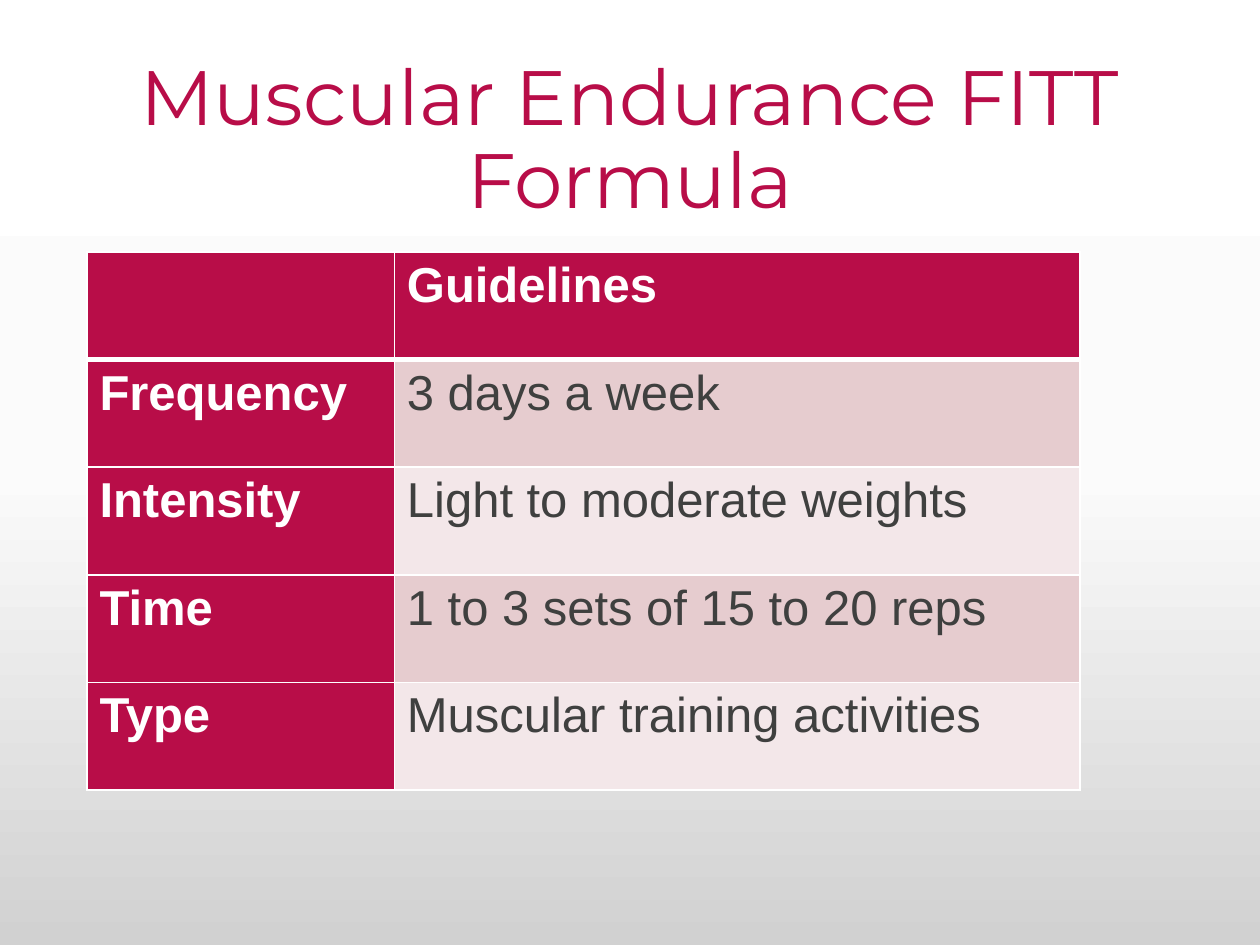
from lxml import etree
from pptx import Presentation
from pptx.dml.color import RGBColor
from pptx.enum import text
from pptx.oxml import ns
from pptx.util import Inches, Pt

CRIMSON = RGBColor(0xB8, 0x0D, 0x48)
ROSE = RGBColor(0xE6, 0xCC, 0xCF)
BLUSH = RGBColor(0xF3, 0xE7, 0xE9)
CHARCOAL = RGBColor(0x3F, 0x40, 0x3F)
WHITE = RGBColor(0xFF, 0xFF, 0xFF)
BACKGROUND_STOPS = ((0, "FFFFFF"), (50, "FBFBFB"), (100, "D1D1D1"))

ROWS = (
    ("", "Guidelines"),
    ("Frequency", "3 days a week"),
    ("Intensity", "Light to moderate weights"),
    ("Time", "1 to 3 sets of 15 to 20 reps"),
    ("Type", "Muscular training activities"),
)
COLUMN_WIDTHS = (2.44, 5.44)
ROW_HEIGHT = 0.854


def add_element(parent, tag, **attributes):
    """Append a DrawingML element to parent and return it."""
    return etree.SubElement(parent, ns.qn(tag), **attributes)


def set_background(page):
    """Fill the page with a vertical gradient."""
    fill = page.background.fill
    fill.gradient()
    fill.gradient_angle = 270
    stops = page.background._cSld.find(".//" + ns.qn("a:gsLst"))
    for stop in list(stops):
        stops.remove(stop)
    for position, color in BACKGROUND_STOPS:
        stop = add_element(stops, "a:gs", pos=str(position * 1000))
        add_element(stop, "a:srgbClr", val=color)


def style_span(span, name, size, color, bold=False):
    """Set the font of a run."""
    span.font.name = name
    span.font.size = Pt(size)
    span.font.bold = bold
    span.font.color.rgb = color


def set_title(page, wording):
    """Place and format the title placeholder."""
    title = page.shapes.title
    title.left, title.top = Inches(0.69), Inches(0.4)
    title.width, title.height = Inches(8.62), Inches(1.45)
    frame = title.text_frame
    frame.text = wording
    frame.word_wrap = True
    frame.auto_size = text.MSO_AUTO_SIZE.NONE
    frame.vertical_anchor = text.MSO_ANCHOR.MIDDLE
    para = frame.paragraphs[0]
    para.alignment = text.PP_ALIGN.CENTER
    para.line_spacing = 0.9
    style_span(para.runs[0], "Montserrat", 44, CRIMSON)


def set_borders(cell, top, bottom):
    """Draw white borders, with the top and bottom widths in points."""
    properties = cell._tc.get_or_add_tcPr()
    for side, width in (("L", 1), ("R", 1), ("T", top), ("B", bottom)):
        line = add_element(properties, f"a:ln{side}", w=str(Pt(width)))
        fill = add_element(line, "a:solidFill")
        add_element(fill, "a:srgbClr", val=str(WHITE))


def fill_cell(cell, wording, row, column):
    """Write one cell and color it by its place in the table."""
    heading = row == 0 or column == 0
    set_borders(cell, top=3 if row == 1 else 1, bottom=3 if row == 0 else 1)
    cell.fill.solid()
    band = ROSE if row % 2 else BLUSH
    cell.fill.fore_color.rgb = CRIMSON if heading else band
    cell.text_frame.text = wording
    for span in cell.text_frame.paragraphs[0].runs:
        style_span(span, "Arial", 28, WHITE if heading else CHARCOAL, heading)


def add_guidelines(page):
    """Add the table of training guidelines."""
    table = page.shapes.add_table(
        len(ROWS), len(COLUMN_WIDTHS), Inches(0.69), Inches(2),
        Inches(sum(COLUMN_WIDTHS)), Inches(ROW_HEIGHT * len(ROWS)),
    ).table
    table.first_col = True
    for column, width in zip(table.columns, COLUMN_WIDTHS):
        column.width = Inches(width)
    for row, wordings in enumerate(ROWS):
        table.rows[row].height = Inches(ROW_HEIGHT)
        for column, wording in enumerate(wordings):
            fill_cell(table.cell(row, column), wording, row, column)


def main():
    """Build the slide and save the deck."""
    deck = Presentation()
    deck.slide_width, deck.slide_height = Inches(10), Inches(7.5)
    page = deck.slides.add_slide(deck.slide_layouts[5])
    set_background(page)
    set_title(page, "Muscular Endurance FITT Formula")
    add_guidelines(page)
    deck.save("out.pptx")


if __name__ == "__main__":
    main()
